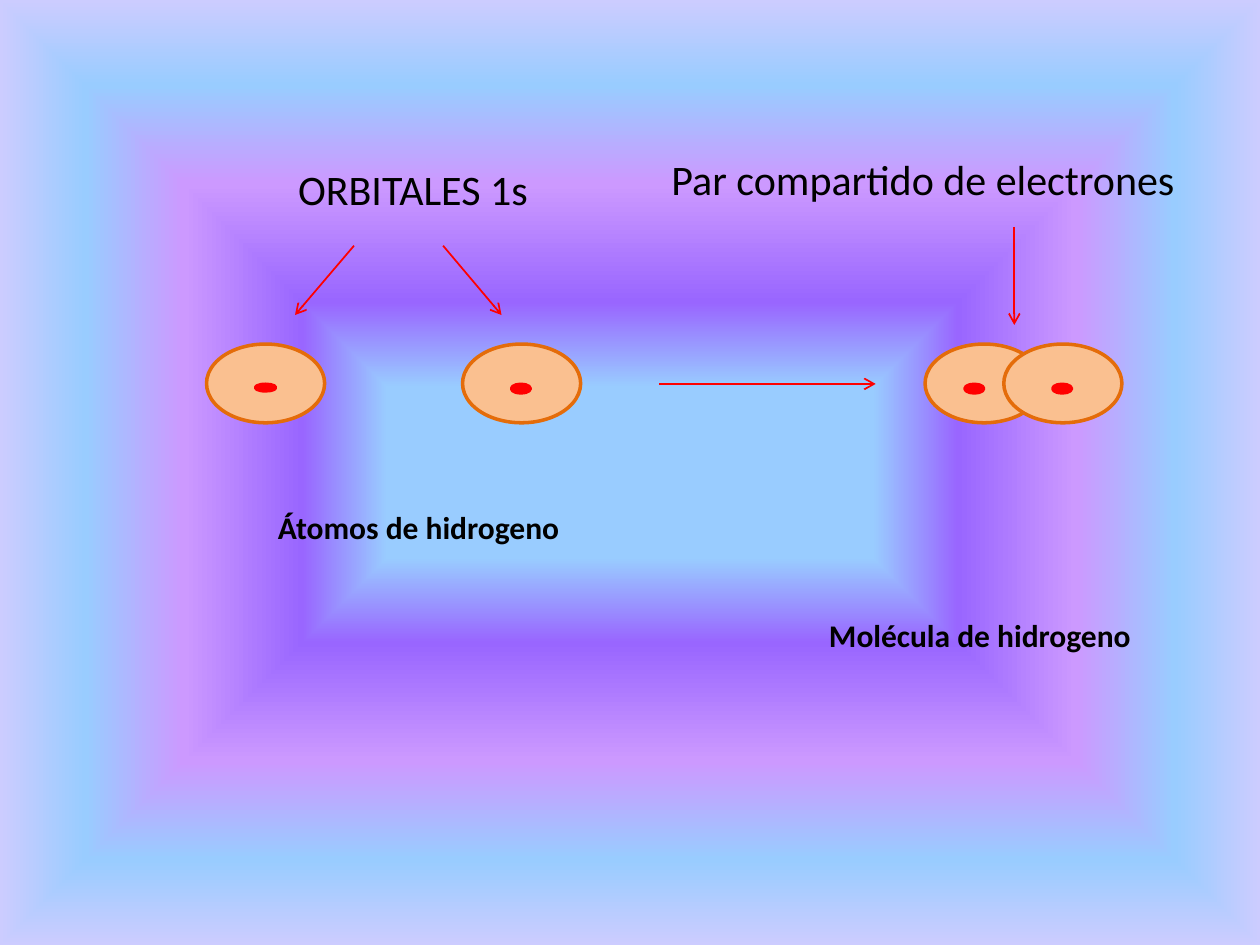
from dataclasses import dataclass

from lxml.etree import SubElement
from pptx import Presentation
from pptx.dml.color import RGBColor
from pptx.enum.shapes import MSO_CONNECTOR as CONNECTOR, MSO_SHAPE as SHAPE
from pptx.oxml import parse_xml
from pptx.oxml.ns import nsdecls, qn
from pptx.util import Pt


@dataclass(frozen=True)
class Theme:
    font: str = "Calibri"
    text: str = "000000"
    cloud: str = "FAC090"
    cloud_line: str = "E46C0A"
    accent: str = "FF0000"
    label_size: int = 24
    caption_size: int = 18
    outline: int = 2
    arrow: int = 1
    gradient: tuple = ((18, "99CCFF"), (36, "9966FF"), (61, "CC99FF"),
                       (82, "99CCFF"), (100, "CCCCFF"))


THEME = Theme()
CLOUD_W, CLOUD_H = 67.5, 45
NUCLEUS_X, NUCLEUS_Y = 28, 23


def set_background(slide):
    stops = "".join(f'<a:gs pos="{pos * 1000}"><a:srgbClr val="{color}"/></a:gs>'
                    for pos, color in THEME.gradient)
    bg = parse_xml(
        f'<p:bg {nsdecls("p", "a")}><p:bgPr><a:gradFill rotWithShape="1">'
        f'<a:gsLst>{stops}</a:gsLst><a:path path="shape">'
        '<a:fillToRect l="50000" t="50000" r="50000" b="50000"/></a:path>'
        '</a:gradFill><a:effectLst/></p:bgPr></p:bg>')
    slide.element.cSld.insert(0, bg)


def add_ellipse(slide, x, y, w, h, fill, line):
    sp = slide.shapes.add_shape(SHAPE.OVAL, Pt(x), Pt(y), Pt(w), Pt(h))
    sp.shadow.inherit = False
    sp.fill.solid()
    sp.fill.fore_color.rgb = RGBColor.from_string(fill)
    sp.line.color.rgb = RGBColor.from_string(line)
    sp.line.width = Pt(THEME.outline)


def add_cloud(slide, x, y):
    add_ellipse(slide, x, y, CLOUD_W, CLOUD_H, THEME.cloud, THEME.cloud_line)


def add_nucleus(slide, x, y, w=10.7, h=5):
    add_ellipse(slide, x, y, w, h, THEME.accent, THEME.accent)


def add_arrow(slide, x1, y1, x2, y2):
    line = slide.shapes.add_connector(CONNECTOR.STRAIGHT, Pt(x1), Pt(y1), Pt(x2), Pt(y2))
    line.line.color.rgb = RGBColor.from_string(THEME.accent)
    line.line.width = Pt(THEME.arrow)
    SubElement(line.line._get_or_add_ln(), qn("a:tailEnd"), type="arrow")
    SubElement(line._element.spPr, qn("a:effectLst"))


def add_text(slide, x, y, w, h, text, size, bold=False):
    tf = slide.shapes.add_textbox(Pt(x), Pt(y), Pt(w), Pt(h)).text_frame
    tf.word_wrap = True
    r = tf.paragraphs[0].add_run()
    r.text = text
    r.font.name = THEME.font
    r.font.size = Pt(size)
    r.font.bold = bold
    r.font.color.rgb = RGBColor.from_string(THEME.text)


def add_atoms(slide, left, top):
    """Two separate atoms, with their orbitals pointed out."""
    cloud_y = top + 106.6
    for dx, nucleus_w, nucleus_h in ((0, 11.5, 3.8), (146.3, 10.7, 5)):
        add_cloud(slide, left + dx, cloud_y)
        add_nucleus(slide, left + dx + NUCLEUS_X, cloud_y + NUCLEUS_Y, nucleus_w, nucleus_h)
    for start, end in ((84.3, 50.6), (135.2, 168.6)):
        add_arrow(slide, left + start, top + 50.4, left + end, top + 90)
    add_text(slide, left + 45.3, top, 163.4, 36, "ORBITALES 1s", THEME.label_size)
    add_text(slide, left + 33.8, top + 196.6, 196.6, 29, "Átomos de hidrogeno",
             THEME.caption_size, bold=True)


def add_molecule(slide, left, top):
    """Two overlapping atoms that share a pair of electrons."""
    cloud_y = top + 112.4
    for dx in (152, 197):
        add_cloud(slide, left + dx, cloud_y)
    for dx in (174.8, 197 + NUCLEUS_X):
        add_nucleus(slide, left + dx, cloud_y + NUCLEUS_Y)
    add_arrow(slide, left + 203, top + 45.4, left + 203, top + 101.5)
    add_text(slide, left, top, 326.2, 36, "Par compartido de electrones", THEME.label_size)
    add_text(slide, left + 90, top + 264.3, 219.6, 29, "Molécula de hidrogeno",
             THEME.caption_size, bold=True)


def main():
    prs = Presentation()
    prs.slide_width, prs.slide_height = Pt(720), Pt(540)
    slide = prs.slides.add_slide(prs.slide_layouts[6])
    set_background(slide)
    add_atoms(slide, 118, 90)
    add_arrow(slide, 376.6, 219.4, 500.4, 219.4)
    add_molecule(slide, 376.6, 84.2)
    prs.save("out.pptx")


if __name__ == "__main__":
    main()
